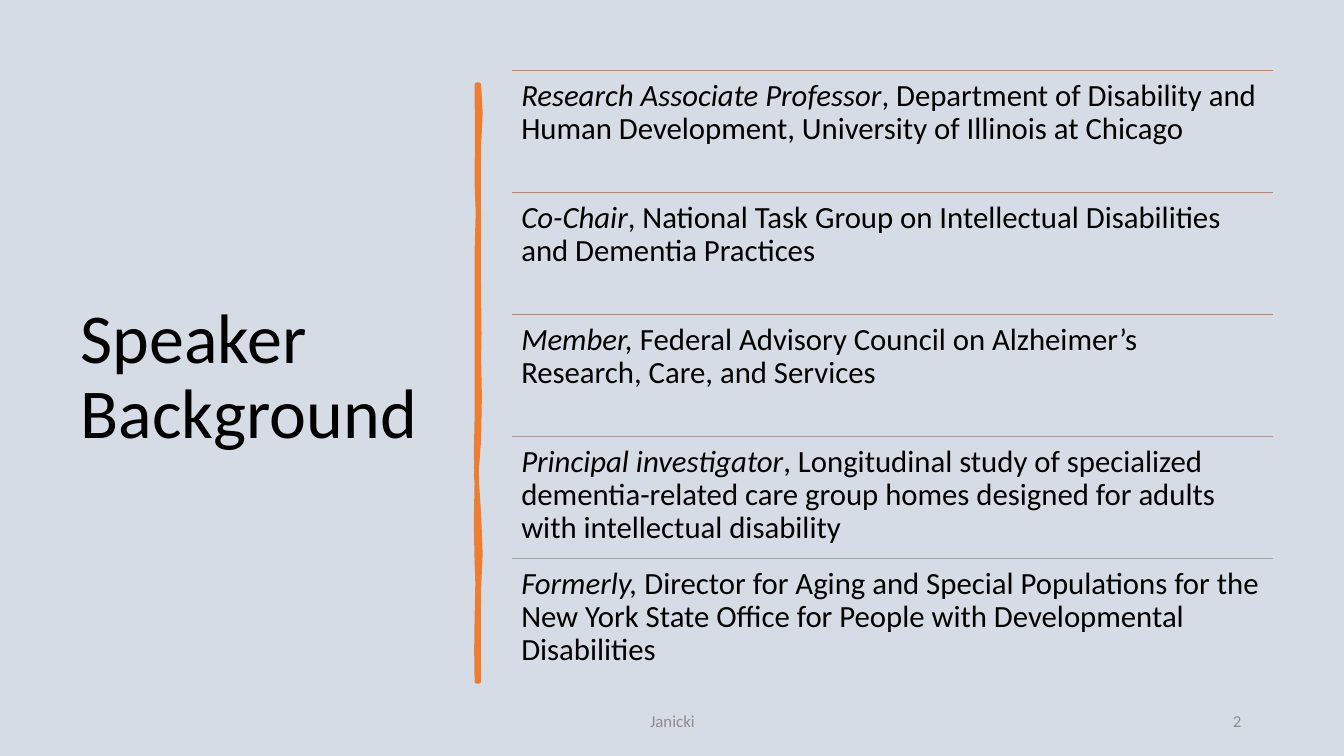
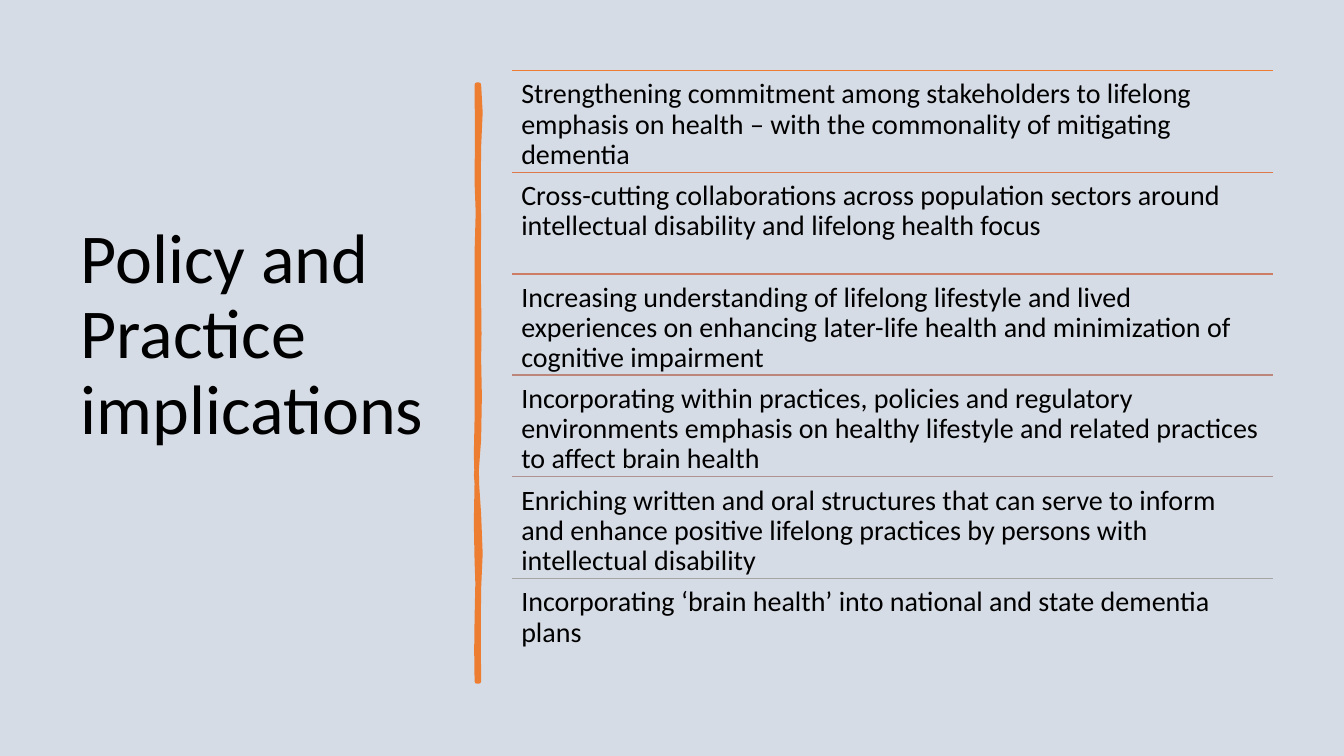
from dataclasses import dataclass

from lxml import etree
from pptx import Presentation
from pptx.dml.color import RGBColor
from pptx.enum import shapes, text
from pptx.oxml import ns
from pptx.slide import Slide
from pptx.util import Emu, Pt

EMU_PER_PX = 9144


@dataclass(frozen=True)
class Theme:
    font: str = "Calibri"
    background: str = "D6DCE5"
    ink: str = "000000"
    muted: str = "8C8C8C"
    accent: str = "ED7D31"
    title_size: int = 50
    footer_size: int = 12
    rule_width: float = 1
    brush_width: float = 3.25
    line_spacing: float = 0.9


@dataclass(frozen=True)
class Box:
    left: int
    top: int
    width: int
    height: int


@dataclass(frozen=True)
class Row:
    rule_color: str
    body: str
    lead: str = ""


@dataclass(frozen=True)
class Page:
    title: str
    title_box: Box
    row_size: int
    rows: tuple[Row, ...]
    footer: str = ""
    number: str = ""


THEME = Theme()
SLIDE_WIDTH, SLIDE_HEIGHT = 1333, 750
ROWS_BOX = Box(508, 70, 755, 605)
ROW_INSET = 9
FOOTER_BOX = Box(442, 695, 450, 40)
NUMBER_BOX = Box(941, 695, 300, 40)

BRUSH_START = (475, 84)
BRUSH_CURVES = (
    ((477, 102), (477, 119), (475, 146)),
    ((473, 173), (476, 195), (475, 226)),
    ((474, 257), (475, 262), (475, 294)),
    ((474, 325), (477, 342), (475, 356)),
    ((473, 370), (479, 414), (475, 436)),
    ((471, 457), (472, 484), (475, 510)),
    ((477, 536), (477, 564), (475, 584)),
    ((473, 603), (476, 650), (475, 676)),
    ((474, 676), (473, 676), (473, 676)),
    ((474, 646), (471, 644), (473, 613)),
    ((474, 583), (474, 570), (473, 557)),
    ((472, 544), (472, 495), (473, 477)),
    ((473, 459), (471, 445), (473, 415)),
    ((474, 386), (472, 373), (473, 335)),
    ((474, 298), (472, 281), (473, 250)),
    ((474, 218), (475, 200), (473, 181)),
    ((470, 163), (477, 104), (473, 84)),
)

PAGES = (
    Page(
        title="Speaker Background",
        title_box=Box(70, 70, 374, 611),
        row_size=22,
        rows=(
            Row("ED7D31", ", Department of Disability and Human Development, "
                "University of Illinois at Chicago", "Research Associate Professor"),
            Row("D87A51", ", National Task Group on Intellectual Disabilities "
                "and Dementia Practices", "Co-Chair"),
            Row("C48170", "Federal Advisory Council on Alzheimer’s Research, "
                "Care, and Services", "Member, "),
            Row("B4908B", ", Longitudinal study of specialized dementia-related care "
                "group homes designed for adults with intellectual disability",
                "Principal investigator"),
            Row("A5A5A5", "Director for Aging and Special Populations for the New York "
                "State Office for People with Developmental Disabilities", "Formerly, "),
        ),
        footer="Janicki",
        number="2",
    ),
    Page(
        title="Policy and Practice implications",
        title_box=Box(70, 70, 374, 527),
        row_size=20,
        rows=(
            Row("ED7D31", "Strengthening commitment among stakeholders to lifelong "
                "emphasis on health – with the commonality of mitigating dementia"),
            Row("DC7A4B", "Cross-cutting collaborations across population sectors around "
                "intellectual disability and lifelong health focus"),
            Row("CC7D64", "Increasing understanding of lifelong lifestyle and lived "
                "experiences on enhancing later-life health and minimization of "
                "cognitive impairment"),
            Row("BD867B", "Incorporating within practices, policies and regulatory "
                "environments emphasis on healthy lifestyle and related practices "
                "to affect brain health"),
            Row("B09391", "Enriching written and oral structures that can serve to inform "
                "and enhance positive lifelong practices by persons with "
                "intellectual disability"),
            Row("A5A5A5", "Incorporating ‘brain health’ into national and state "
                "dementia plans"),
        ),
    ),
)


def px(value: float) -> Emu:
    return Emu(round(value * EMU_PER_PX))


def rgb(color: str) -> RGBColor:
    return RGBColor.from_string(color)


def add_text(
    slide: Slide,
    box: Box,
    content: str,
    *,
    size: int,
    lead: str = "",
    color: str = THEME.ink,
    align: text.PP_ALIGN = text.PP_ALIGN.LEFT,
    anchor: text.MSO_ANCHOR = text.MSO_ANCHOR.MIDDLE,
    spacing: float = 1.0,
    inset: int | None = None,
) -> None:
    shape = slide.shapes.add_textbox(
        px(box.left), px(box.top), px(box.width), px(box.height)
    )
    frame = shape.text_frame
    frame.word_wrap = True
    frame.vertical_anchor = anchor
    if inset is not None:
        frame.margin_left = frame.margin_right = px(inset)
        frame.margin_top = frame.margin_bottom = px(inset)
    paragraph = frame.paragraphs[0]
    paragraph.alignment = align
    paragraph.line_spacing = spacing
    for words, italic in ((lead, True), (content, False)):
        if words:
            run = paragraph.add_run()
            run.text = words
            run.font.name = THEME.font
            run.font.size = Pt(size)
            run.font.italic = italic
            run.font.color.rgb = rgb(color)


def add_rule(slide: Slide, left: int, top: int, width: int, color: str) -> None:
    connector = slide.shapes.add_connector(
        shapes.MSO_CONNECTOR.STRAIGHT, px(left), px(top), px(left + width), px(top)
    )
    connector.line.color.rgb = rgb(color)
    connector.line.width = Pt(THEME.rule_width)
    etree.SubElement(connector._element.spPr, ns.qn("a:effectLst"))


def brush_points(steps: int = 2) -> list[tuple[int, int]]:
    points = []
    start = BRUSH_START
    for first, second, end in BRUSH_CURVES:
        for step in range(1, steps + 1):
            t = step / steps
            s = 1 - t
            x, y = (
                s**3 * a + 3 * s * s * t * b + 3 * s * t * t * c + t**3 * d
                for a, b, c, d in zip(start, first, second, end)
            )
            points.append((px(x), px(y)))
        start = end
    return points


def add_brush_stroke(slide: Slide) -> None:
    x, y = BRUSH_START
    builder = slide.shapes.build_freeform(px(x), px(y))
    builder.add_line_segments(brush_points(), close=True)
    shape = builder.convert_to_shape()
    shape.shadow.inherit = False
    shape.fill.solid()
    shape.fill.fore_color.rgb = rgb(THEME.accent)
    shape.line.color.rgb = rgb(THEME.accent)
    shape.line.width = Pt(THEME.brush_width)
    etree.SubElement(shape.line._get_or_add_ln(), ns.qn("a:round"))


def add_rows(slide: Slide, page: Page) -> None:
    count = len(page.rows)
    for index, row in enumerate(page.rows):
        top = ROWS_BOX.top + round(ROWS_BOX.height * index / count)
        box = Box(ROWS_BOX.left, top, ROWS_BOX.width, round(ROWS_BOX.height / count))
        add_rule(slide, box.left, box.top, box.width, row.rule_color)
        add_text(
            slide, box, row.body, lead=row.lead, size=page.row_size,
            anchor=text.MSO_ANCHOR.TOP, spacing=THEME.line_spacing,
            inset=ROW_INSET,
        )


def add_footer(slide: Slide, page: Page) -> None:
    for box, content, align in (
        (FOOTER_BOX, page.footer, text.PP_ALIGN.CENTER),
        (NUMBER_BOX, page.number, text.PP_ALIGN.RIGHT),
    ):
        if content:
            add_text(slide, box, content, size=THEME.footer_size,
                     color=THEME.muted, align=align)


def add_page(presentation: Presentation, page: Page) -> None:
    slide = presentation.slides.add_slide(presentation.slide_layouts[6])
    add_text(slide, page.title_box, page.title, size=THEME.title_size,
             spacing=THEME.line_spacing)
    add_brush_stroke(slide)
    add_footer(slide, page)
    add_rows(slide, page)


def main() -> None:
    presentation = Presentation()
    presentation.slide_width = px(SLIDE_WIDTH)
    presentation.slide_height = px(SLIDE_HEIGHT)
    background = presentation.slide_master.background.fill
    background.solid()
    background.fore_color.rgb = rgb(THEME.background)
    for page in PAGES:
        add_page(presentation, page)
    presentation.save("out.pptx")


if __name__ == "__main__":
    main()
